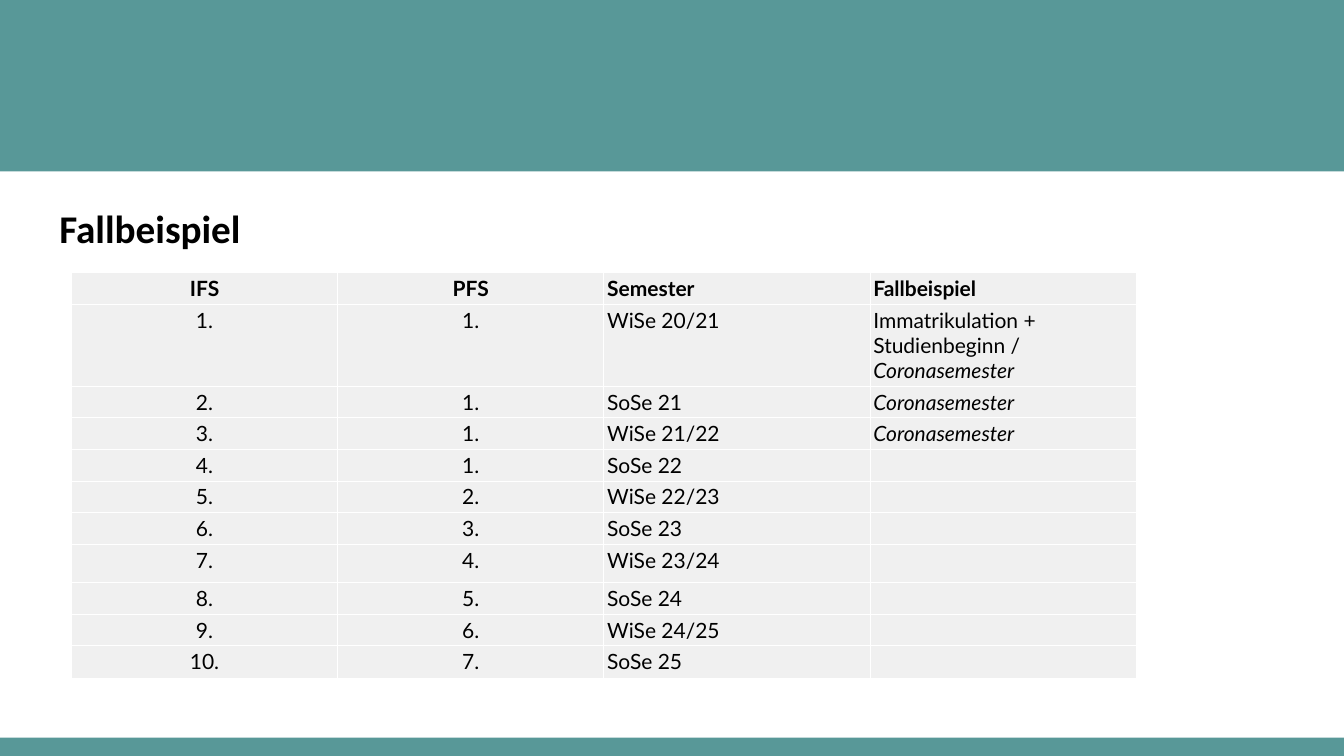
from dataclasses import dataclass

from lxml import etree
from pptx import Presentation
from pptx import util as u
from pptx.dml.color import RGBColor
from pptx.enum import shapes, text
from pptx.oxml import ns


@dataclass(frozen=True)
class Theme:
    """Colours, fonts and type sizes of the slide."""
    band: str = "589898"
    cell: str = "F0F0F0"
    rule: str = "FFFFFF"
    ink: str = "000000"
    title_font: str = "Calibri"
    table_font: str = "Lato"
    title_size: float = 28
    table_size: float = 15
    rule_width: float = 0.75


THEME = Theme()
WIDTH, HEIGHT = 33.87, 19.05
HEADER = ["IFS", "PFS", "Semester", "Fallbeispiel"]
CORONA = ("Coronasemester", True)
SEMESTERS = [
    (1, "WiSe 20/21", [("Immatrikulation + Studienbeginn / ", False), CORONA]),
    (1, "SoSe 21", [CORONA]),
    (1, "WiSe 21/22", [CORONA]),
    (1, "SoSe 22", []),
    (2, "WiSe 22/23", []),
    (3, "SoSe 23", []),
    (4, "WiSe 23/24", []),
    (5, "SoSe 24", []),
    (6, "WiSe 24/25", []),
    (7, "SoSe 25", []),
]
COLUMN_WIDTH, ROW_HEIGHT = 6.71, 0.77
TALL_ROWS = {1: 2.03, 7: 0.97, 10: 0.81}


def apply(obj, formats):
    """Set every attribute named in formats on obj."""
    for name, value in formats.items():
        setattr(obj, name, value)


def add_run(p, content, **formats):
    """Add a run of black text to a paragraph."""
    r = p.add_run()
    r.text = content
    apply(r.font, formats)
    r.font.color.rgb = RGBColor.from_string(THEME.ink)


def add_band(s, top, height):
    """Draw a coloured band across the slide."""
    sp = s.shapes.add_shape(shapes.MSO_SHAPE.RECTANGLE, 0, u.Cm(top), u.Cm(WIDTH), u.Cm(height))
    sp.shadow.inherit = False
    sp.fill.solid()
    sp.fill.fore_color.rgb = RGBColor.from_string(THEME.band)
    sp.line.fill.background()


def set_title(s, content):
    """Place and fill the title placeholder."""
    sp = s.shapes.title
    apply(sp, {"left": u.Cm(1.24), "top": u.Cm(5.03), "width": u.Cm(7.47), "height": u.Cm(1.45)})
    tf = sp.text_frame
    apply(tf, {"word_wrap": True, "vertical_anchor": text.MSO_ANCHOR.TOP,
               "auto_size": text.MSO_AUTO_SIZE.SHAPE_TO_FIT_TEXT})
    p = tf.paragraphs[0]
    p.alignment = text.PP_ALIGN.LEFT
    add_run(p, content, name=THEME.title_font, size=u.Pt(THEME.title_size), bold=True)


def add_borders(cell):
    """Rule all four sides of a cell."""
    props = cell._tc.get_or_add_tcPr()
    for i, side in enumerate(("lnL", "lnR", "lnT", "lnB")):
        ln = etree.Element(ns.qn(f"a:{side}"), w=str(u.Pt(THEME.rule_width)))
        fill = etree.SubElement(ln, ns.qn("a:solidFill"))
        etree.SubElement(fill, ns.qn("a:srgbClr"), val=THEME.rule)
        props.insert(i, ln)


def fill_cell(cell, runs, centred, bold):
    """Format a cell and write its (text, italic) runs."""
    sides = ("left", "right", "top", "bottom")
    apply(cell, {f"margin_{side}": u.Cm(0.08) for side in sides})
    cell.fill.solid()
    cell.fill.fore_color.rgb = RGBColor.from_string(THEME.cell)
    add_borders(cell)
    p = cell.text_frame.paragraphs[0]
    p.alignment = text.PP_ALIGN.CENTER if centred else text.PP_ALIGN.LEFT
    for content, italic in runs:
        add_run(p, content, name=THEME.table_font, size=u.Pt(THEME.table_size),
                bold=bold, italic=italic)
    if not runs:
        end = etree.SubElement(p._p, ns.qn("a:endParaRPr"), sz=str(int(THEME.table_size * 100)))
        etree.SubElement(end, ns.qn("a:latin"), typeface=THEME.table_font)


def add_semester_table(s):
    """Add the table of semesters."""
    rows = [[[(name, False)] for name in HEADER]]
    for ifs, (pfs, semester, note) in enumerate(SEMESTERS, 1):
        rows.append([[(f"{ifs}.", False)], [(f"{pfs}.", False)], [(semester, False)], note])
    heights = [TALL_ROWS.get(i, ROW_HEIGHT) for i in range(len(rows))]
    table = s.shapes.add_table(len(rows), len(HEADER), u.Cm(1.8), u.Cm(6.87),
                               u.Cm(COLUMN_WIDTH * len(HEADER)), u.Cm(sum(heights))).table
    apply(table, {"first_row": False, "horz_banding": False})
    for column in table.columns:
        column.width = u.Cm(COLUMN_WIDTH)
    for i, row in enumerate(rows):
        table.rows[i].height = u.Cm(heights[i])
        for j, runs in enumerate(row):
            fill_cell(table.cell(i, j), runs, centred=j < 2, bold=i == 0)


def main():
    """Build and save the slide."""
    prs = Presentation()
    apply(prs, {"slide_width": u.Cm(WIDTH), "slide_height": u.Cm(HEIGHT)})
    s = prs.slides.add_slide(prs.slide_layouts.get_by_name("Title Only"))
    add_band(s, 0, 4.32)
    add_band(s, 18.59, 0.46)
    add_semester_table(s)
    set_title(s, "Fallbeispiel")
    prs.save("out.pptx")


if __name__ == "__main__":
    main()
